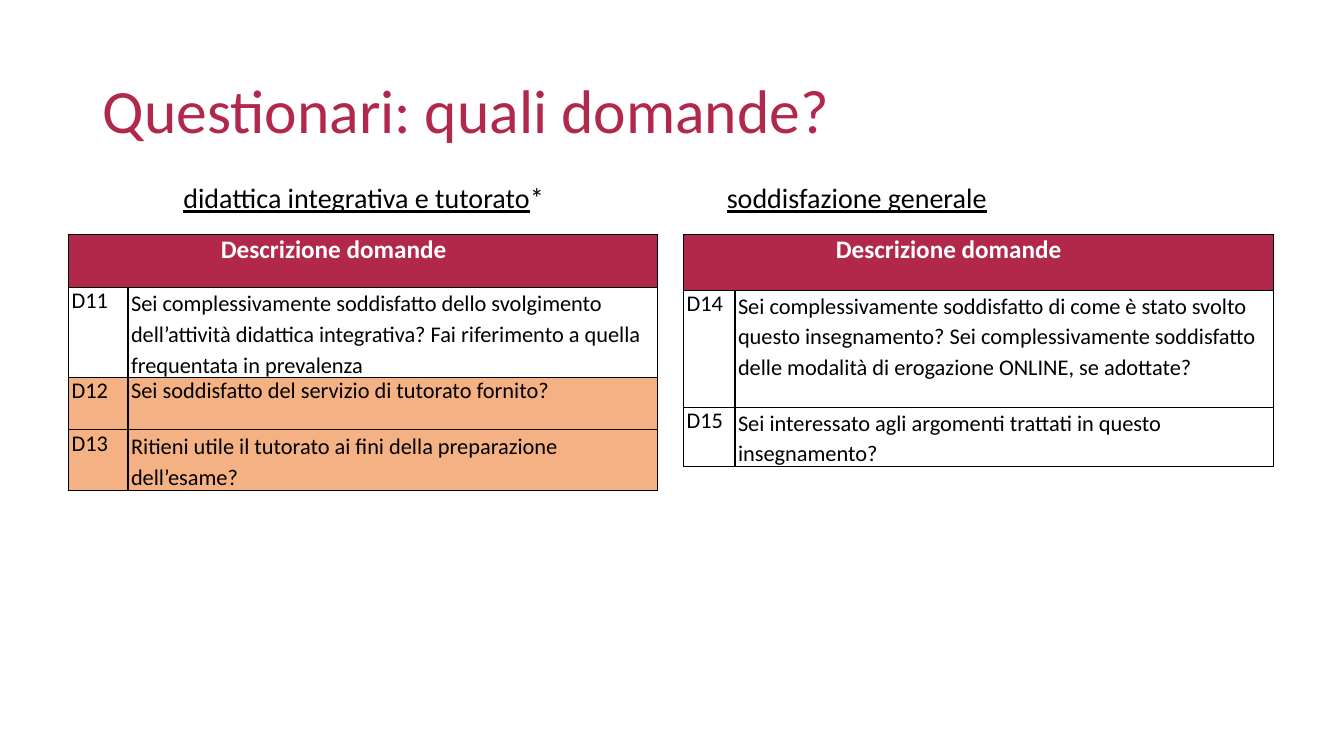
from dataclasses import dataclass

from lxml import etree
from pptx import Presentation
from pptx import util as u
from pptx.dml.color import RGBColor
from pptx.enum import text
from pptx.oxml import ns

FONT = "Calibri"
CRIMSON, ORANGE, BLACK, WHITE = "B2284B", "F4B183", "000000", "FFFFFF"
HEADING = "Descrizione domande"
TABLE_TOP = 2.33


@dataclass
class Question:
    code: str
    wording: str
    height: float
    line_spacing: float = 1.0
    fill: str | None = None


@dataclass
class QuestionTable:
    left: float
    column_widths: tuple[float, float]
    header_height: float
    border_widths: dict[str, float]
    questions: list[Question]


TABLES = [
    QuestionTable(0.68, (0.59, 5.25), 0.52, dict(L=0.85, R=0.85, T=0.85, B=0.85), [
        Question("D11", "Sei complessivamente soddisfatto dello svolgimento dell’attività "
                 "didattica integrativa? Fai riferimento a quella frequentata in prevalenza",
                 0.78, 1.12),
        Question("D12", "Sei soddisfatto del servizio di tutorato fornito?", 0.52, fill=ORANGE),
        Question("D13", "Ritieni utile il tutorato ai fini della preparazione dell’esame?",
                 0.52, 1.12, ORANGE),
    ]),
    QuestionTable(6.78, (0.51, 5.34), 0.55, dict(L=0.85, R=0.85, T=0.92, B=0.92), [
        Question("D14", "Sei complessivamente soddisfatto di come è stato svolto questo "
                 "insegnamento? Sei complessivamente soddisfatto delle modalità di "
                 "erogazione ONLINE, se adottate?", 1.16, 1.11),
        Question("D15", "Sei interessato agli argomenti trattati in questo insegnamento?",
                 0.59, 1.11),
    ]),
]


def color(value: str) -> RGBColor:
    return RGBColor.from_string(value)


def add_run(paragraph, words: str, size: float, hex_color: str,
            bold: bool = False, underline: bool = False) -> None:
    run = paragraph.add_run()
    run.text = words
    run.font.name = FONT
    run.font.size = u.Pt(size)
    run.font.color.rgb = color(hex_color)
    run.font.bold = bold
    run.font.underline = underline


def add_text_paragraph(slide, left: float, top: float, width: float, height: float, anchor):
    """Add a wrapping text box and return its first paragraph."""
    frame = slide.shapes.add_textbox(*map(u.Inches, (left, top, width, height))).text_frame
    frame.word_wrap = True
    frame.vertical_anchor = anchor
    frame.paragraphs[0].line_spacing = 0.9
    return frame.paragraphs[0]


def add_tab_stop(paragraph, position: float) -> None:
    tabs = etree.SubElement(paragraph._p.get_or_add_pPr(), ns.qn("a:tabLst"))
    etree.SubElement(tabs, ns.qn("a:tab"), pos=str(u.Inches(position)), algn="l")


def add_borders(cell, widths: dict[str, float]) -> None:
    properties = cell._tc.get_or_add_tcPr()
    for side, width in widths.items():
        line = etree.SubElement(properties, ns.qn(f"a:ln{side}"), w=str(u.Pt(width)))
        fill = etree.SubElement(line, ns.qn("a:solidFill"))
        etree.SubElement(fill, ns.qn("a:srgbClr"), val=BLACK)


def style_cell(cell, borders: dict[str, float], fill: str | None) -> None:
    cell.margin_left = cell.margin_right = cell.margin_top = cell.margin_bottom = 0
    add_borders(cell, borders)
    if fill:
        cell.fill.solid()
        cell.fill.fore_color.rgb = color(fill)
    else:
        cell.fill.background()


def write_cell(cell, words: str, indent: float, size: float, hex_color: str,
               bold: bool = False, line_spacing: float = 1.0) -> None:
    paragraph = cell.text_frame.paragraphs[0]
    paragraph._p.get_or_add_pPr().set("marL", str(u.Inches(indent)))
    paragraph.line_spacing = line_spacing
    add_run(paragraph, words, size, hex_color, bold)


def add_question_table(slide, data: QuestionTable) -> None:
    heights = [data.header_height] + [question.height for question in data.questions]
    fills = [CRIMSON] + [question.fill for question in data.questions]
    table = slide.shapes.add_table(
        len(heights), 2, u.Inches(data.left), u.Inches(TABLE_TOP),
        u.Inches(sum(data.column_widths)), u.Inches(sum(heights))).table
    table.first_row = table.horz_banding = False
    for column, width in zip(table.columns, data.column_widths):
        column.width = u.Inches(width)
    for row, height, fill in zip(table.rows, heights, fills):
        row.height = u.Inches(height)
        for cell in row.cells:
            style_cell(cell, data.border_widths, fill)

    table.cell(0, 0).merge(table.cell(0, 1))
    write_cell(table.cell(0, 0), HEADING, 1.51, 18, WHITE, bold=True)
    for index, question in enumerate(data.questions, start=1):
        write_cell(table.cell(index, 0), question.code, 0.03, 16, BLACK)
        write_cell(table.cell(index, 1), question.wording, 0.03, 16, BLACK,
                   line_spacing=question.line_spacing)


def main() -> None:
    presentation = Presentation()
    presentation.slide_width = u.Inches(13.33)
    presentation.slide_height = u.Inches(7.5)
    slide = presentation.slides.add_slide(presentation.slide_layouts[6])

    title = add_text_paragraph(slide, 0.92, 0.4, 11.5, 1.45, text.MSO_ANCHOR.MIDDLE)
    add_run(title, "Questionari: quali domande?", 44, CRIMSON)

    subtitles = add_text_paragraph(slide, 1.72, 1.78, 10.14, 0.44, text.MSO_ANCHOR.TOP)
    add_tab_stop(subtitles, 5.39)
    add_run(subtitles, "didattica integrativa e tutorato", 20, BLACK, underline=True)
    add_run(subtitles, "*\t", 20, BLACK)
    add_run(subtitles, "soddisfazione generale", 20, BLACK, underline=True)

    for data in TABLES:
        add_question_table(slide, data)
    presentation.save("out.pptx")


if __name__ == "__main__":
    main()
